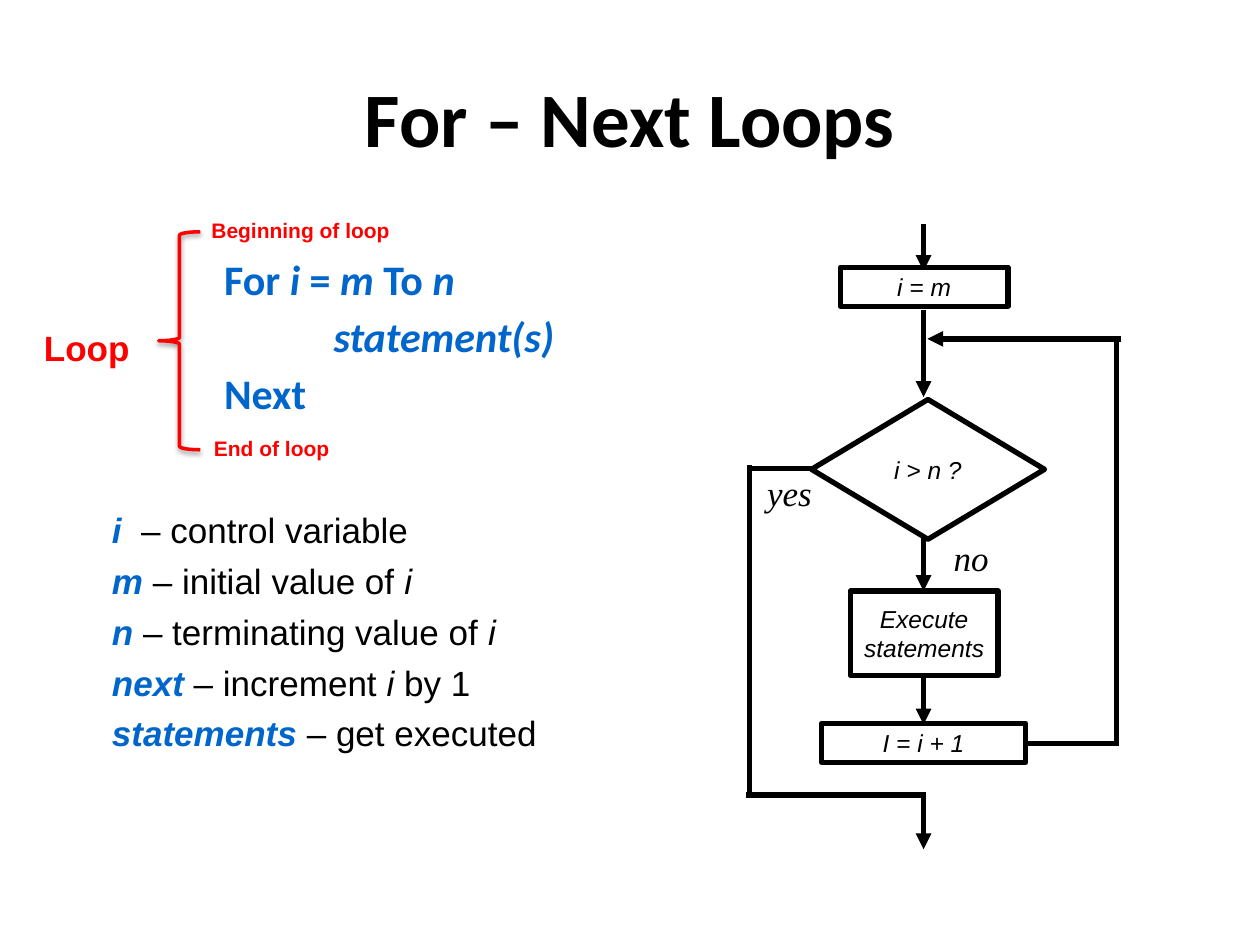
from lxml import etree
from pptx import Presentation
from pptx.dml.color import RGBColor
from pptx.enum.shapes import MSO_CONNECTOR, MSO_SHAPE
from pptx.enum.text import MSO_ANCHOR, PP_ALIGN
from pptx.oxml.ns import qn
from pptx.util import Inches, Pt

BOX, TEST, BRACE = (MSO_SHAPE.FLOWCHART_PROCESS, MSO_SHAPE.FLOWCHART_DECISION,
                    MSO_SHAPE.LEFT_BRACE)
LEFT, MID = PP_ALIGN.LEFT, PP_ALIGN.CENTER
TOP, CENTER = MSO_ANCHOR.TOP, MSO_ANCHOR.MIDDLE
BLACK, WHITE, BLUE, RED = "000000", "FFFFFF", "0066CC", "FF0000"
AXIS = 7.33  # centre line of the flowchart

# Text: each paragraph is a list of (words, is italic)
TITLE = "For – Next Loops"
CODE = [
    [("For ", 0), ("i", 1), (" = ", 0), ("m", 1), (" To ", 0), ("n", 1)],
    [("statement(s)", 1)],
    [("Next", 0)],
]
STEP = 0.87  # indent of the loop's body
# Terms: a blue name, then its meaning
TERMS = [
    ("i ", [(" – control variable", 0)]),
    ("m", [(" – initial value of ", 0), ("i", 1)]),
    ("n ", [("– terminating value of ", 0), ("i", 1)]),
    ("next", [(" – increment ", 0), ("i", 1), (" by 1", 0)]),
    ("statements", [(" – get executed", 0)]),
]
# Labels: words, left, top, width, height, font, size, colour, bold, italic
LABELS = [
    ("yes", 5.99, 3.69, 0.56, 0.43, "Times New Roman", 20, BLACK, False, True),
    ("no", 7.47, 4.21, 0.48, 0.43, "Times New Roman", 20, BLACK, False, True),
    ("Loop", 0.25, 2.54, 0.89, 0.44, "Arial", 20, RED, True, False),
    ("Beginning of loop", 1.58, 1.68, 1.63, 0.3, "Arial", 12, RED, True, False),
    ("End of loop", 1.6, 3.41, 1.13, 0.3, "Arial", 12, RED, True, False),
]
# Flowchart nodes: kind, lines, left, top, width, height
NODES = [
    (BOX, ["i = m"], 6.67, 2.12, 1.33, 0.31),
    (TEST, ["i > n ?"], 6.44, 3.17, 1.85, 1.11),
    (BOX, ["Execute", "statements"], 6.75, 4.69, 1.17, 0.67),
    (BOX, ["I = i + 1"], 6.52, 5.74, 1.62, 0.31),
]
# Downward arrows on the axis: from, to
DROPS = [(1.78, 2.15), (2.46, 3.15), (4.26, 4.69), (5.36, 5.75), (6.3, 6.74)]
# Side branches: x1, y1, x2, y2, has arrowhead
SIDES = [
    (5.93, 3.72, 6.76, 3.72, False),
    (5.95, 3.69, 5.95, 6.32, False),
    (5.92, 6.31, 7.35, 6.31, False),
    (7.32, 5.9, 8.85, 5.9, False),
    (8.86, 2.67, 8.86, 5.92, False),
    (8.9, 2.69, 7.36, 2.69, True),
]


def rgb(code):
    return RGBColor.from_string(code)


def style(font, name, size, color, bold=False, italic=False):
    font.name, font.size = name, Pt(size)
    font.bold, font.italic = bold, italic
    font.color.rgb = rgb(color)


def rows(frame, count):
    """Return count paragraphs of a text frame."""
    for _ in range(count - 1):
        frame.add_paragraph()
    return frame.paragraphs


def add_runs(para, parts):
    for words, slant in parts:
        run = para.add_run()
        run.text = words
        run.font.italic = bool(slant)


def hang(para, gap):
    """Hanging indent, with a gap above."""
    para.space_before = Pt(gap)
    props = para._p.get_or_add_pPr()
    props.set("marL", str(Inches(0.38)))
    props.set("indent", str(-Inches(0.38)))


def add_text(slide, place, wrap=True, anchor=TOP):
    frame = slide.shapes.add_textbox(*map(Inches, place)).text_frame
    frame.word_wrap, frame.vertical_anchor = wrap, anchor
    return frame


def add_line(slide, x1, y1, x2, y2, head):
    line = slide.shapes.add_connector(
        MSO_CONNECTOR.STRAIGHT, *map(Inches, (x1, y1, x2, y2)))
    line.line.width = Pt(3)
    line.line.color.rgb = rgb(BLACK)
    if head:
        etree.SubElement(line.line._get_or_add_ln(), qn("a:tailEnd"), type="triangle")
    etree.SubElement(line._element.spPr, qn("a:effectLst"))


def add_node(slide, kind, lines, *place):
    node = slide.shapes.add_shape(kind, *map(Inches, place))
    node.shadow.inherit = False
    node.fill.solid()
    node.fill.fore_color.rgb = rgb(WHITE)
    node.line.color.rgb = rgb(BLACK)
    node.line.width = Pt(3)
    frame = node.text_frame
    frame.word_wrap, frame.vertical_anchor = False, CENTER
    for para, words in zip(rows(frame, len(lines)), lines):
        para.text, para.alignment = words, MID
        style(para.font, "Arial", 14, BLACK, italic=True)


def add_brace(slide):
    brace = slide.shapes.add_shape(BRACE, *map(Inches, (1.26, 1.84, 0.33, 1.73)))
    brace.fill.background()
    brace.line.color.rgb = rgb(RED)
    brace.line.width = Pt(2)
    brace.shadow.inherit = False
    effects = brace._element.spPr.find(qn("a:effectLst"))
    shade = etree.SubElement(
        effects, qn("a:outerShdw"), blurRad=str(Pt(3.1)), dist=str(Pt(1.6)),
        dir="5400000", rotWithShape="0")
    tint = etree.SubElement(shade, qn("a:srgbClr"), val=BLACK)
    etree.SubElement(tint, qn("a:alpha"), val="38000")


def main():
    deck = Presentation()
    deck.slide_width, deck.slide_height = Inches(10), Inches(7.5)
    slide = deck.slides.add_slide(deck.slide_layouts[6])

    # Title
    para = add_text(slide, (0.5, 0.3, 9, 1.25), anchor=CENTER).paragraphs[0]
    para.text, para.alignment = TITLE, MID
    style(para.font, "Calibri", 44, BLACK, bold=True)

    # Loop code
    code = rows(add_text(slide, (1.68, 1.96, 2.88, 1.58)), len(CODE))
    for para, parts in zip(code, CODE):
        hang(para, 4)
        style(para.font, "Calibri", 24, BLUE, bold=True)
        add_runs(para, parts)
    inner = code[1]._p.get_or_add_pPr()
    inner.set("marL", str(Inches(STEP)))
    inner.set("indent", "0")

    # Terms
    terms = rows(add_text(slide, (0.79, 3.99, 4.43, 2.79)), len(TERMS))
    for para, (name, parts) in zip(terms, TERMS):
        hang(para, 5)
        style(para.font, "Arial", 20, BLACK)
        run = para.add_run()
        run.text = name
        style(run.font, "Arial", 20, BLUE, bold=True, italic=True)
        add_runs(para, parts)

    # Flowchart: lines below, nodes above
    for start, end in DROPS:
        add_line(slide, AXIS, start, AXIS, end, True)
    for side in SIDES:
        add_line(slide, *side)
    for node in NODES:
        add_node(slide, *node)

    # Brace and labels
    add_brace(slide)
    for words, x, y, w, h, *look in LABELS:
        para = add_text(slide, (x, y, w, h), wrap=False).paragraphs[0]
        para.text, para.alignment = words, LEFT
        style(para.font, *look)

    deck.save("out.pptx")


if __name__ == "__main__":
    main()
